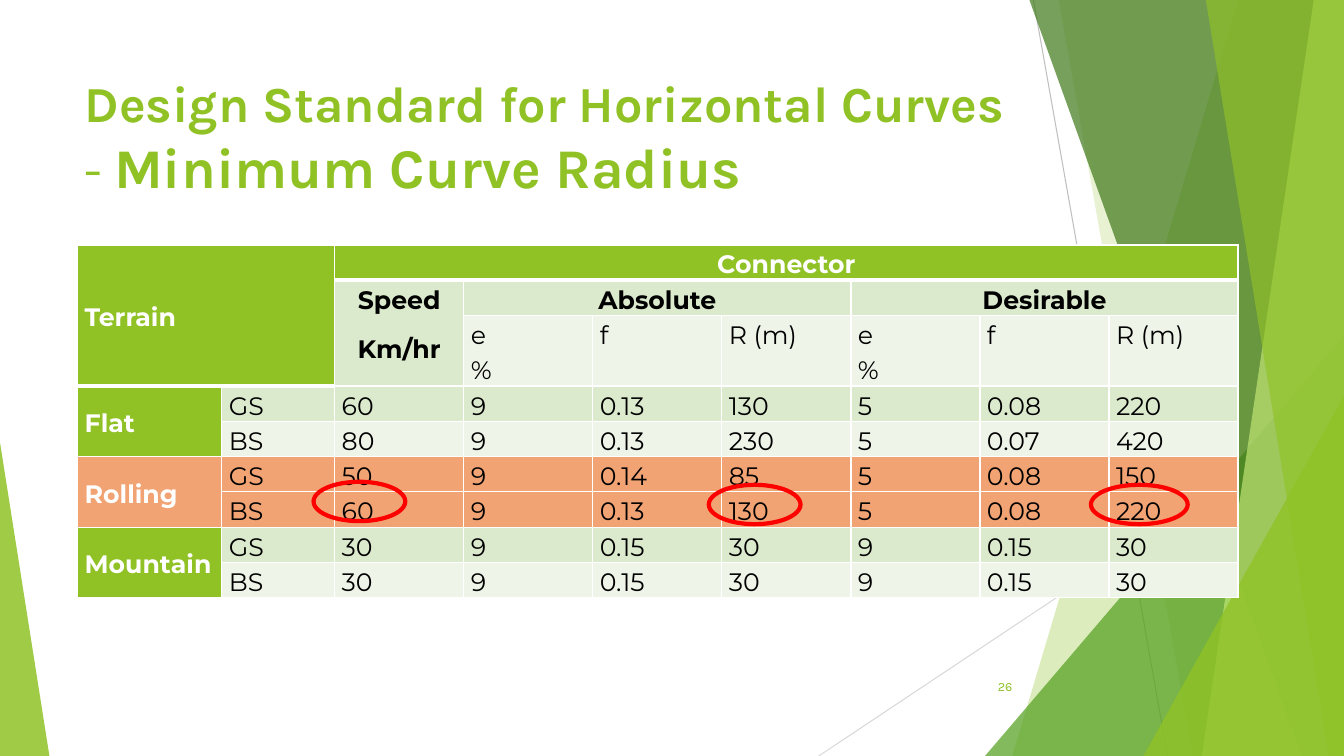
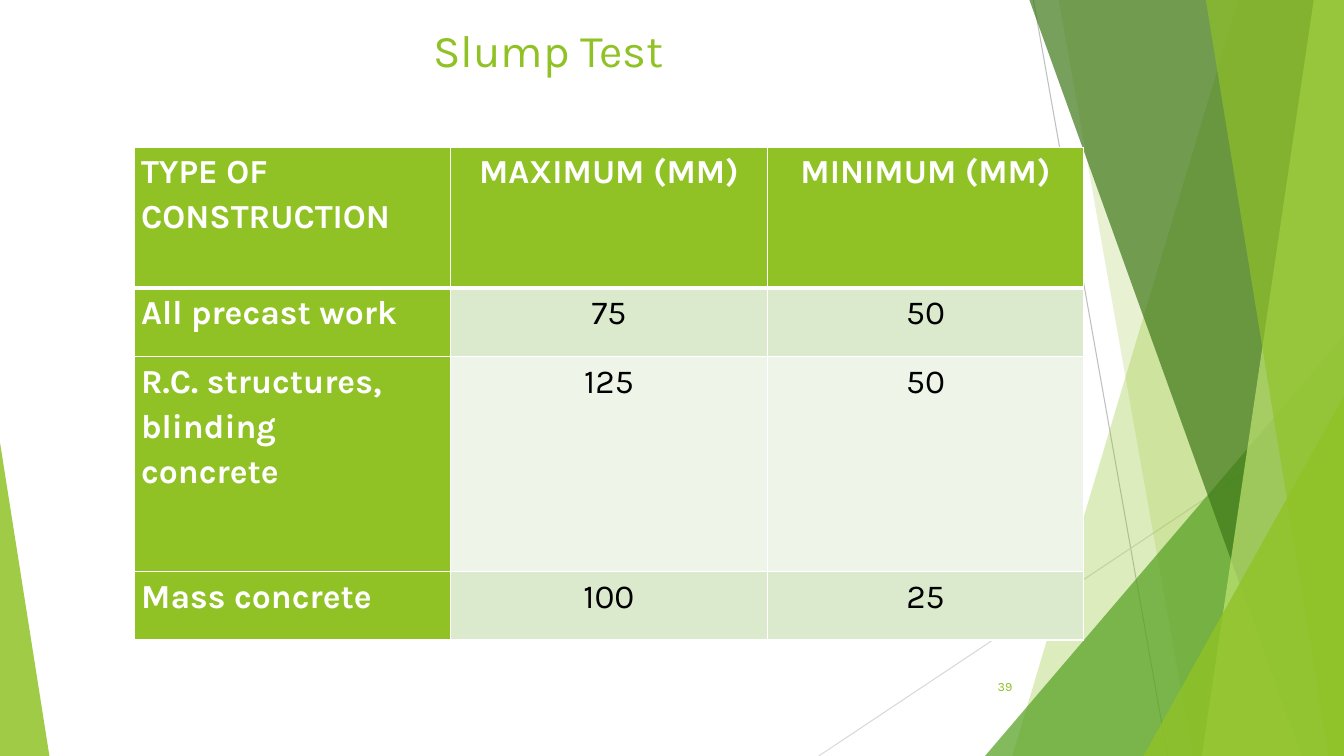
import pptx
import pptx.util
import pptx.dml.color
import pptx.enum.shapes
import pptx.enum.text
import pptx.oxml.ns
import lxml.etree

Inches, Pt = pptx.util.Inches, pptx.util.Pt
SHAPE = pptx.enum.shapes.MSO_SHAPE
ALIGN = pptx.enum.text.PP_ALIGN
ANCHOR = pptx.enum.text.MSO_ANCHOR
W, H = 13.33, 7.5
COLORS = {
    "green": "90C226", "leaf": "54A021", "forest": "3F7819", "lime": "C0E474",
    "band": "DBE9CD", "pale": "EEF4E8", "orange": "F1A374", "red": "FF0000",
    "white": "FFFFFF", "black": "000000", "gray": "BFBFBF", "silver": "D9D9D9",
}


def rgb(name):
    return pptx.dml.color.RGBColor.from_string(COLORS[name])


def sub(parent, tag, **attrs):
    return lxml.etree.SubElement(parent, pptx.oxml.ns.qn(tag), attrs)


class Deck:
    font = "Karla"

    def __init__(self):
        self.prs = pptx.Presentation()
        self.prs.slide_width, self.prs.slide_height = Inches(W), Inches(H)

    def slide(self, number):
        self.s = self.prs.slides.add_slide(self.prs.slide_layouts[6])
        self.backdrop()
        p = self.text(9.39, 6.61, 0.75, 0.4, 9, ALIGN.RIGHT, ANCHOR.MIDDLE)
        p.add_run().text = str(number)

    # Shapes
    def paint(self, sp, color, alpha):
        sp.shadow.inherit = False
        sp.line.fill.background()
        sp.fill.solid()
        sp.fill.fore_color.rgb = rgb(color)
        clr = sp.fill._xPr.find(".//" + pptx.oxml.ns.qn("a:srgbClr"))
        sub(clr, "a:alpha", val=str(alpha * 1000))

    def line(self, x1, y1, x2, y2, color):
        cn = self.s.shapes.add_connector(
            pptx.enum.shapes.MSO_CONNECTOR.STRAIGHT,
            Inches(x1), Inches(y1), Inches(x2), Inches(y2))
        cn.line.color.rgb = rgb(color)
        cn.line.width = Pt(0.75)
        sub(cn._element.spPr, "a:effectLst")

    def fold(self, top_x, bottom_x, color, alpha):
        """Full-height panel between a slanted edge and the right side."""
        fb = self.s.shapes.build_freeform(Inches(top_x), 0)
        fb.add_line_segments([(Inches(x), Inches(y)) for x, y in
                              ((W, 0), (W, H), (bottom_x, H))])
        self.paint(fb.convert_to_shape(), color, alpha)

    def triangle(self, x, y, w, apex, color, alpha):
        sp = self.s.shapes.add_shape(SHAPE.ISOSCELES_TRIANGLE, Inches(x),
                                     Inches(y), Inches(w), Inches(H - y))
        sp.adjustments[0] = apex
        self.paint(sp, color, alpha)

    def ring(self, x, y, w):
        sp = self.s.shapes.add_shape(SHAPE.OVAL, Inches(x), Inches(y),
                                     Inches(w), Inches(0.39))
        sp.shadow.inherit = False
        sp.fill.background()
        sp.line.color.rgb = rgb("red")
        sp.line.width = Pt(3)

    def backdrop(self):
        self.line(10.25, 0, 11.58, H, "gray")
        self.line(W, 4.03, 8.12, H, "silver")
        self.fold(12.28, 10.04, "green", 30)
        self.fold(10.5, 11.83, "green", 20)
        self.triangle(9.77, 3.33, 3.56, 1, "leaf", 72)
        self.fold(10.21, 12.91, "forest", 70)
        self.fold(13.03, 11.92, "lime", 70)
        self.fold(11.96, 13.18, "green", 65)
        self.triangle(11.34, 3.93, 1.99, 1, "green", 80)
        self.triangle(0, 4.39, 0.49, 0, "green", 85)

    # Text
    def text(self, x, y, w, h, size, align, anchor=ANCHOR.TOP):
        tf = self.s.shapes.add_textbox(Inches(x), Inches(y),
                                       Inches(w), Inches(h)).text_frame
        tf.word_wrap = True
        tf.vertical_anchor = anchor
        p = tf.paragraphs[0]
        p.alignment = align
        p.font.name, p.font.size = self.font, Pt(size)
        p.font.color.rgb = rgb("green")
        return p

    def title(self, y, h, size, lines, align=ALIGN.LEFT):
        """Each line is a list of (text, size, bold) runs."""
        p = self.text(0.74, y, 9.4, h, size, align)
        for i, runs in enumerate(lines):
            if i:
                p.add_line_break()
            for text, run_size, bold in runs:
                r = p.add_run()
                r.text = text
                r.font.name, r.font.size = self.font, Pt(run_size)
                r.font.bold = bold
                r.font.color.rgb = rgb("green")

    # Tables
    def borders(self, cell, top, bottom):
        tcPr = cell._tc.get_or_add_tcPr()
        for i, (side, width) in enumerate(
                (("L", 1), ("R", 1), ("T", top), ("B", bottom))):
            ln = sub(tcPr, "a:ln" + side, w=str(Pt(width)))
            sub(sub(ln, "a:solidFill"), "a:srgbClr", val=COLORS["white"])
            tcPr.insert(i, ln)

    def table(self, x, y, cols, heights, rows, size, font, centred, corner=(1, 1),
              merges=(), accent=(), subhead=(), align=ALIGN.LEFT, middle_cols=0):
        """Row 0 and the corner block form the head; column 0 is the side."""
        tb = self.s.shapes.add_table(
            len(rows), len(cols), Inches(x), Inches(y),
            Inches(sum(cols)), Inches(sum(heights))).table
        tb.first_row = tb.horz_banding = False
        for col, w in zip(tb.columns, cols):
            col.width = Inches(w)
        for row, h in zip(tb.rows, heights):
            row.height = Inches(h)
        for r1, c1, r2, c2 in merges:
            tb.cell(r1, c1).merge(tb.cell(r2, c2))

        def is_head(r, c):
            return r == 0 or (r < corner[0] and c < corner[1])

        for r, row in enumerate(rows):
            for c, value in enumerate(row):
                cell = tb.cell(r, c)
                head = is_head(r, c)
                strong = head or c == 0
                if r in accent:
                    fill = "orange"
                elif strong:
                    fill = "green"
                else:
                    fill = "band" if r % 2 else "pale"
                cell.fill.solid()
                cell.fill.fore_color.rgb = rgb(fill)
                edge = head and (r + 1 == len(rows) or not is_head(r + 1, c))
                below = r > 0 and not head and is_head(r - 1, c)
                self.borders(cell, 3 if below else 1, 3 if edge else 1)
                cell.margin_left = cell.margin_right = Inches(0.07)
                cell.margin_top = cell.margin_bottom = 0
                cell.vertical_anchor = (ANCHOR.MIDDLE if c < middle_cols
                                        else ANCHOR.TOP)
                if value is None:
                    continue
                cell.text = value
                for p in cell.text_frame.paragraphs:
                    p.alignment = ALIGN.CENTER if centred(r, c) else align
                    p.line_spacing = 1.15
                    if r in subhead:
                        p.space_after = Pt(10)
                    p.font.name, p.font.size = font, Pt(size)
                    p.font.bold = strong or r in subhead
                    p.font.color.rgb = rgb("white" if strong else "black")


def curve_radius(deck):
    deck.slide(26)
    deck.title(0.67, 1.44, 36, [
        [("Design Standard for Horizontal Curves", 36, True)],
        [("- ", 36, False), ("Minimum Curve Radius", 40, True)]])
    measures = ["e\n%", "f", "R (m)"]
    rows = [
        ["Terrain", None, "Connector"] + [None] * 6,
        [None, None, "Speed\nKm/hr", "Absolute", None, None, "Desirable", None, None],
        [None] * 3 + measures * 2,
        ["Flat", "GS", "60", "9", "0.13", "130", "5", "0.08", "220"],
        [None, "BS", "80", "9", "0.13", "230", "5", "0.07", "420"],
        ["Rolling", "GS", "50", "9", "0.14", "85", "5", "0.08", "150"],
        [None, "BS", "60", "9", "0.13", "130", "5", "0.08", "220"],
        ["Mountain", "GS", "30", "9", "0.15", "30", "9", "0.15", "30"],
        [None, "BS", "30", "9", "0.15", "30", "9", "0.15", "30"],
    ]
    merges = [(0, 0, 2, 1), (0, 2, 0, 8), (1, 2, 2, 2), (1, 3, 1, 5), (1, 6, 1, 8)]
    merges += [(r, 0, r + 1, 0) for r in (3, 5, 7)]
    deck.table(0.77, 2.43, [1.43, 1.12] + [1.28] * 7,
               [0.35, 0.35, 0.7] + [0.35] * 6, rows, 18, "Montserrat",
               centred=lambda r, c: r < 2 and c > 1, corner=(3, 2),
               merges=merges, accent=(5, 6), subhead=(1,),
               align=ALIGN.JUSTIFY, middle_cols=2)
    # Highlighted values
    for x, y, w in ((7.03, 4.81, 0.91), (10.82, 4.81, 0.96), (3.11, 4.78, 0.91)):
        deck.ring(x, y, w)


def slump_test(deck):
    deck.slide(39)
    deck.title(0.17, 0.68, 32.4, [[("Slump Test", 32.4, False)]], ALIGN.CENTER)
    rows = [
        ["TYPE OF CONSTRUCTION", "MAXIMUM (MM)", "MINIMUM (MM)"],
        ["All precast work", "75", "50"],
        ["R.C. structures, blinding\nconcrete", "125", "50"],
        ["Mass concrete", "100", "25"],
    ]
    deck.table(1.33, 1.46, [3.14] * 3, [1.4, 0.68, 2.13, 0.68], rows, 24,
               deck.font, centred=lambda r, c: c > 0)


def main():
    deck = Deck()
    curve_radius(deck)
    slump_test(deck)
    deck.prs.save("out.pptx")


if __name__ == "__main__":
    main()
